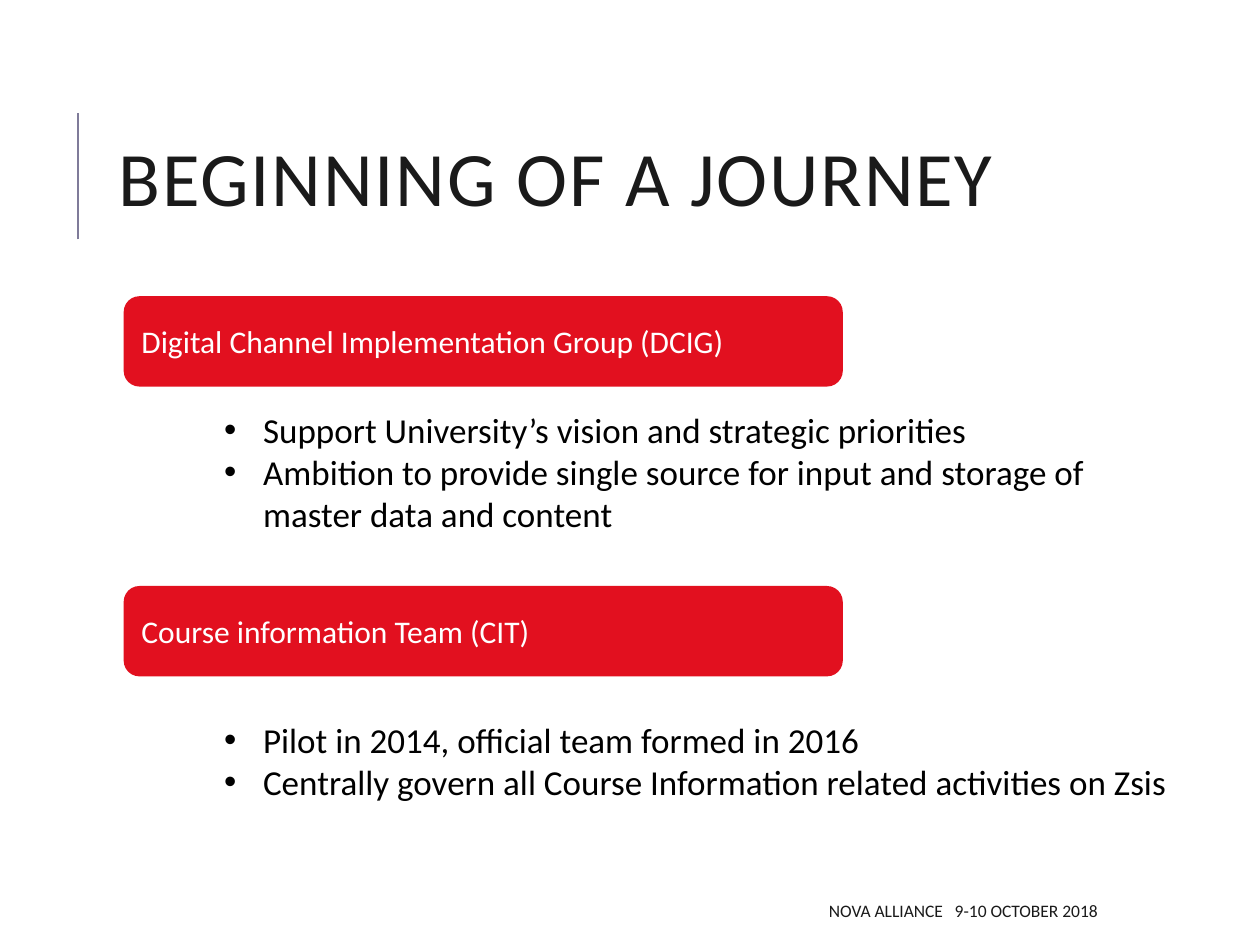
"""Build the "Beginning of a journey" slide with two teams and their aims."""
import pptx
import pptx.dml.color
import pptx.enum.shapes
import pptx.enum.text
import pptx.oxml.ns
import pptx.util
from pptx.util import Inches

RED = pptx.dml.color.RGBColor(0xE2, 0x10, 0x1F)
WHITE = pptx.dml.color.RGBColor(0xFF, 0xFF, 0xFF)
BLACK = pptx.dml.color.RGBColor(0x00, 0x00, 0x00)
CHARCOAL = pptx.dml.color.RGBColor(0x1A, 0x1A, 0x1A)
MAUVE = pptx.dml.color.RGBColor(0x7F, 0x7B, 0x99)
LEFT = pptx.enum.text.PP_ALIGN.LEFT
RIGHT = pptx.enum.text.PP_ALIGN.RIGHT
MIDDLE = pptx.enum.text.MSO_ANCHOR.MIDDLE
TOP = pptx.enum.text.MSO_ANCHOR.TOP

TEAMS = [
    ("Digital Channel Implementation Group (DCIG)", 2.36, 3.19, 7.32, 1.11,
     ["Support University’s vision and strategic priorities",
      "Ambition to provide single source for input and storage of master data and content"]),
    ("Course information Team (CIT)", 4.66, 5.65, 7.83, 0.77,
     ["Pilot in 2014, official team formed in 2016",
      "Centrally govern all Course Information related activities on Zsis"]),
]


def write_text(shape, text, size, color, anchor=MIDDLE, alignment=LEFT):
    """Fill a shape with text in one style."""
    text_frame = shape.text_frame
    text_frame.text = text
    text_frame.word_wrap = True
    text_frame.vertical_anchor = anchor
    for paragraph in text_frame.paragraphs:
        paragraph.alignment = alignment
        for run in paragraph.runs:
            run.font.name = "Calibri"
            run.font.size = pptx.util.Pt(size)
            run.font.color.rgb = color


def add_bullet(paragraph):
    """Give a paragraph a bullet with a hanging indent."""
    properties = paragraph._p.get_or_add_pPr()
    properties.set("marL", str(Inches(0.31)))
    properties.set("indent", str(Inches(-0.31)))
    for tag, name, value in (("a:buFont", "typeface", "Arial"), ("a:buChar", "char", "•")):
        element = pptx.oxml.parse_xml(f"<{tag} {pptx.oxml.ns.nsdecls('a')}/>")
        element.set(name, value)
        properties.append(element)


presentation = pptx.Presentation()
presentation.slide_width = Inches(10)
presentation.slide_height = Inches(7.5)
slide = presentation.slides.add_slide(presentation.slide_layouts[5])

rule = slide.shapes.add_connector(
    pptx.enum.shapes.MSO_CONNECTOR.STRAIGHT, Inches(0.62), Inches(1.9), Inches(0.62), Inches(0.9))
rule.line.color.rgb = MAUVE
rule.line.width = pptx.util.Pt(1.5)
rule._element.spPr.append(pptx.oxml.parse_xml(f"<a:effectLst {pptx.oxml.ns.nsdecls('a')}/>"))

title = slide.shapes.title
title.left, title.top, title.width, title.height = (
    Inches(0.84), Inches(0.64), Inches(7.97), Inches(1.64))
write_text(title, "BEGINNING OF A JOURNEY", 44, CHARCOAL)
title_paragraph = title.text_frame.paragraphs[0]
title_paragraph.line_spacing = 0.8
title_paragraph.runs[0].font._element.set("spc", "100")

footer = slide.shapes.add_textbox(Inches(3.97), Inches(7.08), Inches(4.84), Inches(0.3))
write_text(footer, "NOVA ALLIANCE   9-10 OCTOBER 2018", 10, CHARCOAL, alignment=RIGHT)

for name, banner_top, aims_top, aims_width, aims_height, aims in TEAMS:
    banner = slide.shapes.add_shape(
        pptx.enum.shapes.MSO_SHAPE.ROUNDED_RECTANGLE,
        Inches(0.99), Inches(banner_top), Inches(5.69), Inches(0.7))
    banner.shadow.inherit = False
    banner.fill.solid()
    banner.fill.fore_color.rgb = RED
    banner.line.color.rgb = RED
    banner.line.width = pptx.util.Pt(1.25)
    write_text(banner, name, 18, WHITE)

    aims_box = slide.shapes.add_textbox(
        Inches(1.68), Inches(aims_top), Inches(aims_width), Inches(aims_height))
    write_text(aims_box, "\n".join(aims), 20, BLACK, anchor=TOP)
    aims_box.text_frame.auto_size = pptx.enum.text.MSO_AUTO_SIZE.SHAPE_TO_FIT_TEXT
    for paragraph in aims_box.text_frame.paragraphs:
        add_bullet(paragraph)

presentation.save("out.pptx")
